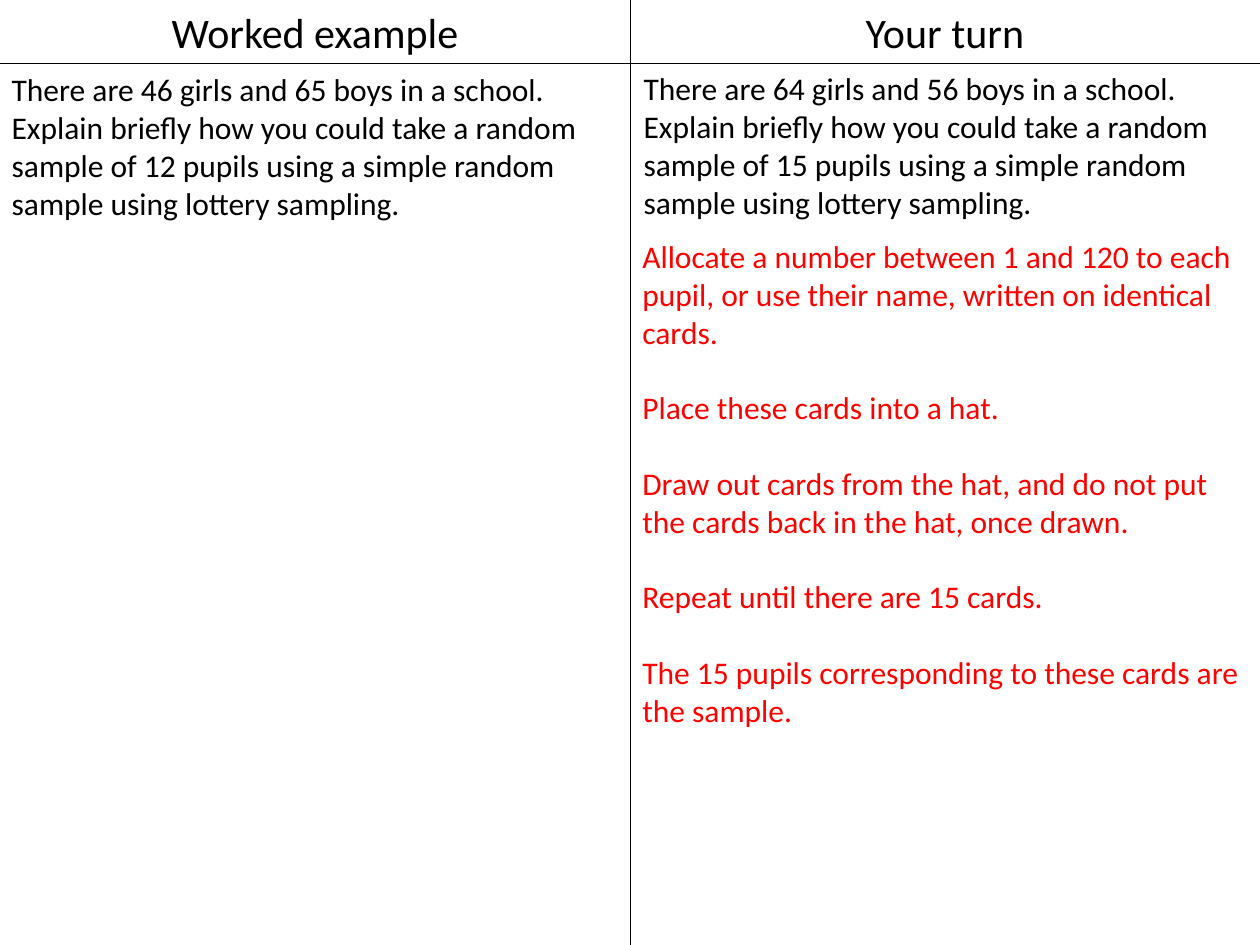
"""Build a two-column worked example slide on simple random sampling."""
import lxml.etree
import pptx
import pptx.dml.color
import pptx.enum.shapes
import pptx.enum.text
import pptx.oxml.ns
import pptx.util

COLORS = {"text": "000000", "answer": "FF0000", "rule": "000000"}
WIDTH, HEIGHT, MIDDLE, HEADER = 1260, 945, 630, 63


def px(length):
    return pptx.util.Emu(round(length * 914400 / 126))


def fill_text(shape, box, paragraphs, size, color, alignment, gap=0):
    shape.left, shape.top, shape.width, shape.height = map(px, box)
    frame = shape.text_frame
    frame.word_wrap = True
    frame.auto_size = pptx.enum.text.MSO_AUTO_SIZE.NONE
    frame.vertical_anchor = pptx.enum.text.MSO_ANCHOR.TOP
    frame.text = "\n".join(paragraphs)
    for paragraph in frame.paragraphs:
        paragraph.alignment = alignment
        paragraph.space_before = pptx.util.Pt(0)
        paragraph.space_after = pptx.util.Pt(gap)
        properties = paragraph._p.get_or_add_pPr()
        properties.set("marL", "0")
        properties.set("indent", "0")
        lxml.etree.SubElement(properties, pptx.oxml.ns.qn("a:buNone"))
        paragraph.font.name = "Calibri"
        paragraph.font.size = pptx.util.Pt(size)
        paragraph.font.color.rgb = pptx.dml.color.RGBColor.from_string(COLORS[color])


presentation = pptx.Presentation()
presentation.slide_width = px(WIDTH)
presentation.slide_height = px(HEIGHT)
slide = presentation.slides.add_slide(presentation.slide_layouts.get_by_name("Two Content"))

for ends in [(0, HEADER, WIDTH, HEADER), (MIDDLE, 0, MIDDLE, HEIGHT)]:
    rule = slide.shapes.add_connector(pptx.enum.shapes.MSO_CONNECTOR.STRAIGHT, *map(px, ends))
    rule.line.color.rgb = pptx.dml.color.RGBColor.from_string(COLORS["rule"])
    rule.line.width = pptx.util.Pt(0.5)
    lxml.etree.SubElement(rule._element.spPr, pptx.oxml.ns.qn("a:effectLst"))

title, left_question, right_question = slide.placeholders
right_heading = slide.shapes.add_textbox(0, 0, 0, 0)
answer = slide.shapes.add_textbox(0, 0, 0, 0)
center = pptx.enum.text.PP_ALIGN.CENTER
left = pptx.enum.text.PP_ALIGN.LEFT

columns = [
    (title, "Worked example", 0, left_question, -1, 64, 46, 65, 12),
    (right_heading, "Your turn", MIDDLE, right_question, 631, 63, 64, 56, 15),
]
for heading, label, x, question, question_x, question_y, girls, boys, sample in columns:
    fill_text(heading, (x, 0, MIDDLE, HEADER), [label], 24, "text", center)
    wording = (
        f"There are {girls} girls and {boys} boys in a school. "
        f"Explain briefly how you could take a random sample of {sample} pupils "
        "using a simple random sample using lottery sampling."
    )
    fill_text(question, (question_x, question_y, MIDDLE, 165), [wording], 18, "text", left)

steps = [
    "Allocate a number between 1 and 120 to each pupil, or use their name, written on identical cards.",
    "Place these cards into a hat.",
    "Draw out cards from the hat, and do not put the cards back in the hat, once drawn.",
    "Repeat until there are 15 cards.",
    "The 15 pupils corresponding to these cards are the sample.",
]
fill_text(answer, (MIDDLE, 231, MIDDLE, 509), steps, 18, "answer", left, gap=21.6)

presentation.save("out.pptx")
